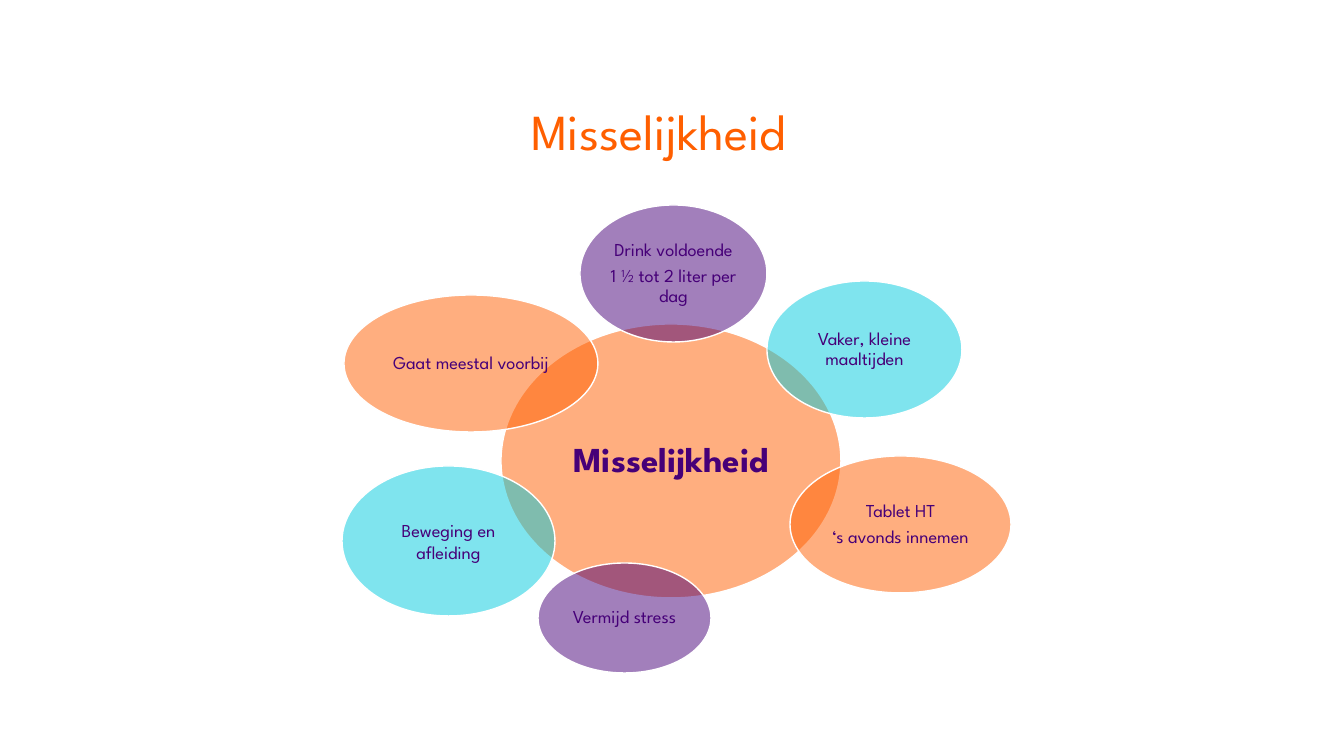
from lxml import etree
from pptx import Presentation
from pptx.dml.color import RGBColor
from pptx.enum.shapes import MSO_SHAPE as SHAPE
from pptx.enum.text import MSO_ANCHOR as ANCHOR, PP_ALIGN as ALIGN
from pptx.oxml.ns import qn
from pptx.util import Emu, Pt

COLORS = {
    "orange": "FF5F00",
    "purple": "460078",
    "cyan": "00CBDE",
    "white": "FFFFFF",
}
FONT = "League Spartan"
PX_PER_INCH = 100.8


def px(n):
    return Emu(round(n * 914400 / PX_PER_INCH))


def rgb(name):
    return RGBColor.from_string(COLORS[name])


def write(tf, text, size, color="purple", bold=False, anchor=ANCHOR.MIDDLE,
          insets=(2, 2, 2, 2), spacing=0.9, after=0.35):
    tf.word_wrap = True
    tf.vertical_anchor = anchor
    tf.margin_left, tf.margin_top, tf.margin_right, tf.margin_bottom = map(px, insets)
    for i, line in enumerate(text.split("\n")):
        p = tf.add_paragraph() if i else tf.paragraphs[0]
        p.alignment = ALIGN.CENTER
        p.line_spacing = spacing
        p.space_after = Pt(size * after)
        r = p.add_run()
        r.text = line
        r.font.name = FONT
        r.font.size = Pt(size)
        r.font.bold = bold
        r.font.color.rgb = rgb(color)


def add_title(slide, box, text):
    tb = slide.shapes.add_textbox(*map(px, box))
    write(tb.text_frame, text, 36, color="orange", anchor=ANCHOR.TOP,
          insets=(10, 19, 10, 5), after=0)


def add_bubble(slide, box, text, fill, size=13, **fmt):
    sp = slide.shapes.add_shape(SHAPE.OVAL, *map(px, box))
    sp.shadow.inherit = False
    sp.fill.solid()
    sp.fill.fore_color.rgb = rgb(fill)
    color = sp.fill._xPr.find(".//" + qn("a:srgbClr"))
    etree.SubElement(color, qn("a:alpha")).set("val", "50000")
    sp.line.color.rgb = rgb("white")
    sp.line.width = Pt(1)
    write(sp.text_frame, text, size, **fmt)


def add_bubble_diagram(slide, box):
    left, top, width, height = box
    center = (left + 159, top + 119, 340, 274)
    add_bubble(slide, center, "Misselijkheid", "orange", size=25, bold=True,
               insets=(3, 3, 3, 3))

    tips = [
        (238, 0, 187, 137, "Drink voldoende\n1 ½ tot 2 liter per dag", "purple"),
        (425, 76, 195, 137, "Vaker, kleine maaltijden", "cyan"),
        (448, 251, 221, 137, "Tablet HT\n‘s avonds innemen", "orange"),
        (196, 358, 173, 110, "Vermijd stress", "purple"),
        (2, 90, 254, 137, "Gaat meestal voorbij", "orange"),
    ]
    for x, y, w, h, text, fill in tips:
        add_bubble(slide, (left + x, top + y, w, h), text, fill)

    add_bubble(slide, (left, top + 261, 213, 150), "Beweging en afleiding", "cyan",
               insets=(10, 5, 10, 5), spacing=1.0, after=0)


def main():
    prs = Presentation()
    prs.slide_width, prs.slide_height = px(1344), px(756)
    slide = prs.slides.add_slide(prs.slide_layouts[6])
    add_title(slide, (125, 88, 1067, 49), "Misselijkheid")
    add_bubble_diagram(slide, (342, 205, 669, 468))
    prs.save("out.pptx")


if __name__ == "__main__":
    main()
